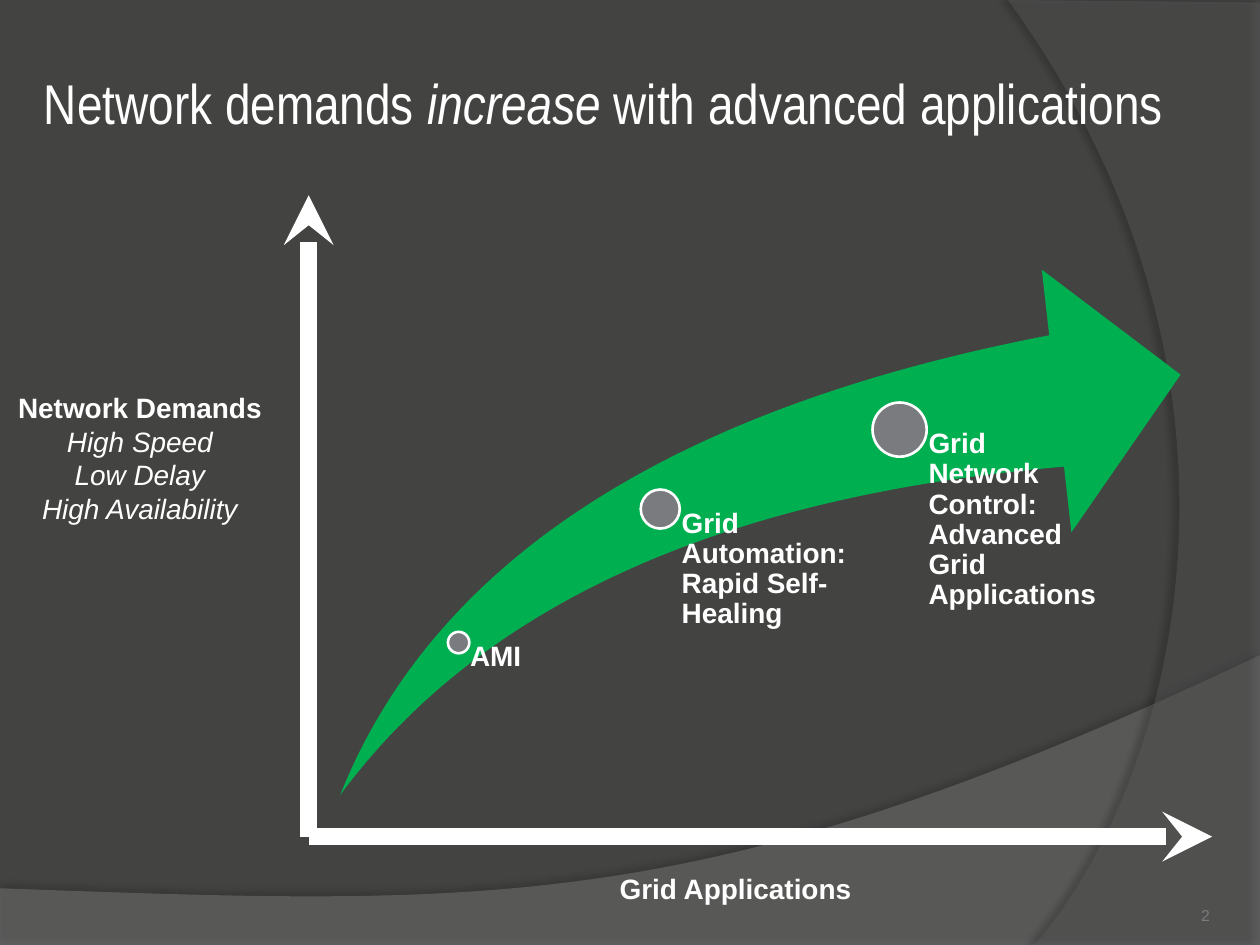
from lxml import etree
from pptx import Presentation
from pptx.dml.color import RGBColor
from pptx.enum import shapes, text
from pptx.oxml import parse_xml
from pptx.oxml.ns import nsdecls, qn
from pptx.util import Inches, Pt

WHITE = RGBColor(0xFF, 0xFF, 0xFF)
DARK = RGBColor(0x43, 0x43, 0x42)
GRAY = RGBColor(0x79, 0x7B, 0x7E)
GREEN = RGBColor(0x00, 0xB0, 0x50)
LOW = RGBColor(0x7F, 0x7F, 0x7F)
SIDE = RGBColor(0x5E, 0x5E, 0x5E)

deck = Presentation()
deck.slide_width, deck.slide_height = Inches(10), Inches(7.5)
slide = deck.slides.add_slide(deck.slide_layouts[6])
slide.background.fill.solid()
slide.background.fill.fore_color.rgb = DARK
parts = slide.shapes


def curve(a, b, c, d, steps=60):
    spots = []
    for i in range(1, steps + 1):
        t = i / steps
        s = 1 - t
        spots.append([s**3 * p + 3 * s * s * t * q + 3 * s * t * t * r + t**3 * e
                      for p, q, r, e in zip(a, b, c, d)])
    return spots


def label(left, top, wide, high, lines, size=16, font="Arial", color=WHITE, bold=True):
    box = parts.add_textbox(Inches(left), Inches(top), Inches(wide), Inches(high))
    frame = box.text_frame
    frame.word_wrap = True
    frame.text = lines
    for para in frame.paragraphs:
        for run in para.runs:
            run.font.size, run.font.name = Pt(size), font
            run.font.color.rgb, run.font.bold = color, bold
    return frame


floor = [(0, 7.05), (0, 7.51), (10, 7.51), (10, 5.2)]
floor += curve((10, 5.2), (5.59, 7.29), (3.91, 7.19), (0, 7.05))
edge = [(10, 0.02), (10, 7.5), (8.21, 7.5)]
edge += curve((8.21, 7.5), (9.35, 6.19), (10.18, 3), (8, 0))
for spots, color, alpha, shade, dist, turn in [
    (floor, LOW, 45, 35, 3.5, 270),
    (edge, SIDE, 40, 45, 4, 180),
]:
    spots = [(Inches(x), Inches(y)) for x, y in spots]
    pen = parts.build_freeform(*spots[0], scale=1.0)
    pen.add_line_segments(spots[1:], close=True)
    wave = pen.convert_to_shape()
    wave.fill.solid()
    wave.fill.fore_color.rgb = color
    wave.line.fill.background()
    tint = wave._element.spPr.find(qn("a:solidFill"))[0]
    etree.SubElement(tint, qn("a:alpha")).set("val", str(alpha * 1000))
    wave._element.spPr.append(parse_xml(
        f'<a:effectLst {nsdecls("a")}><a:outerShdw blurRad="{Pt(4)}" dist="{Pt(dist)}" '
        f'dir="{turn * 60000}" algn="ctr" rotWithShape="0"><a:srgbClr val="000000">'
        f'<a:alpha val="{shade * 1000}"/></a:srgbClr></a:outerShdw></a:effectLst>'))

page = label(0.41, 7.14, 9.29, 0.25, "2", 9, color=GRAY, bold=False)
page.paragraphs[0].alignment = text.PP_ALIGN.RIGHT

needs = label(0, 3.05, 2.22, 1.18,
              "Network Demands\nHigh Speed\nLow Delay\nHigh Availability")
needs.word_wrap = False
for i, para in enumerate(needs.paragraphs):
    para.alignment = text.PP_ALIGN.CENTER
    para.runs[0].font.bold = i == 0
    para.runs[0].font.italic = i > 0
label(4.82, 6.87, 2.07, 0.37, "Grid Applications").word_wrap = False

for x, y in [(2.45, 1.55), (9.62, 6.64)]:
    axis = parts.add_connector(shapes.MSO_CONNECTOR.STRAIGHT,
                               Inches(2.45), Inches(6.64), Inches(x), Inches(y))
    axis.line.color.rgb = WHITE
    axis.line.width = Pt(9.5)
    etree.SubElement(axis.line._get_or_add_ln(), qn("a:tailEnd")).set("type", "stealth")
    etree.SubElement(axis._element.spPr, qn("a:effectLst"))

title = label(0.25, 0.39, 9.55, 0.84, "Network demands ", 32, "Arial Narrow", bold=False)
title.vertical_anchor = text.MSO_ANCHOR.MIDDLE
for words, slant in [("increase", True), (" with advanced applications", False)]:
    run = title.paragraphs[0].add_run()
    run.text = words
    run.font.size, run.font.name = Pt(32), "Arial Narrow"
    run.font.color.rgb, run.font.italic = WHITE, slant

swoosh = parts.add_shape(shapes.MSO_SHAPE.SWOOSH_ARROW,
                         Inches(2.7), Inches(2.14), Inches(6.67), Inches(4.17))
swoosh.adjustments[0] = swoosh.adjustments[1] = 0.25
swoosh.fill.solid()
swoosh.fill.fore_color.rgb = GREEN
swoosh.line.fill.background()
swoosh.shadow.inherit = False

for x, y, size, wide, inset, words in [
    (3.64, 5.1, 0.17, 1.55, 0.09, "AMI"),
    (5.24, 4.04, 0.31, 1.6, 0.17, "Grid Automation: Rapid Self-Healing"),
    (7.14, 3.41, 0.43, 1.6, 0.23, "Grid Network Control: Advanced Grid Applications"),
]:
    dot = parts.add_shape(shapes.MSO_SHAPE.OVAL, Inches(x - size / 2),
                          Inches(y - size / 2), Inches(size), Inches(size))
    dot.fill.solid()
    dot.fill.fore_color.rgb = GRAY
    dot.line.color.rgb = WHITE
    dot.line.width = Pt(1.5)
    dot.shadow.inherit = False
    note = label(x, y, wide, 6.31 - y, words)
    note.margin_left = Inches(inset)
    note.margin_top = note.margin_right = note.margin_bottom = 0
    note.paragraphs[0].line_spacing = 0.9

deck.save("out.pptx")
